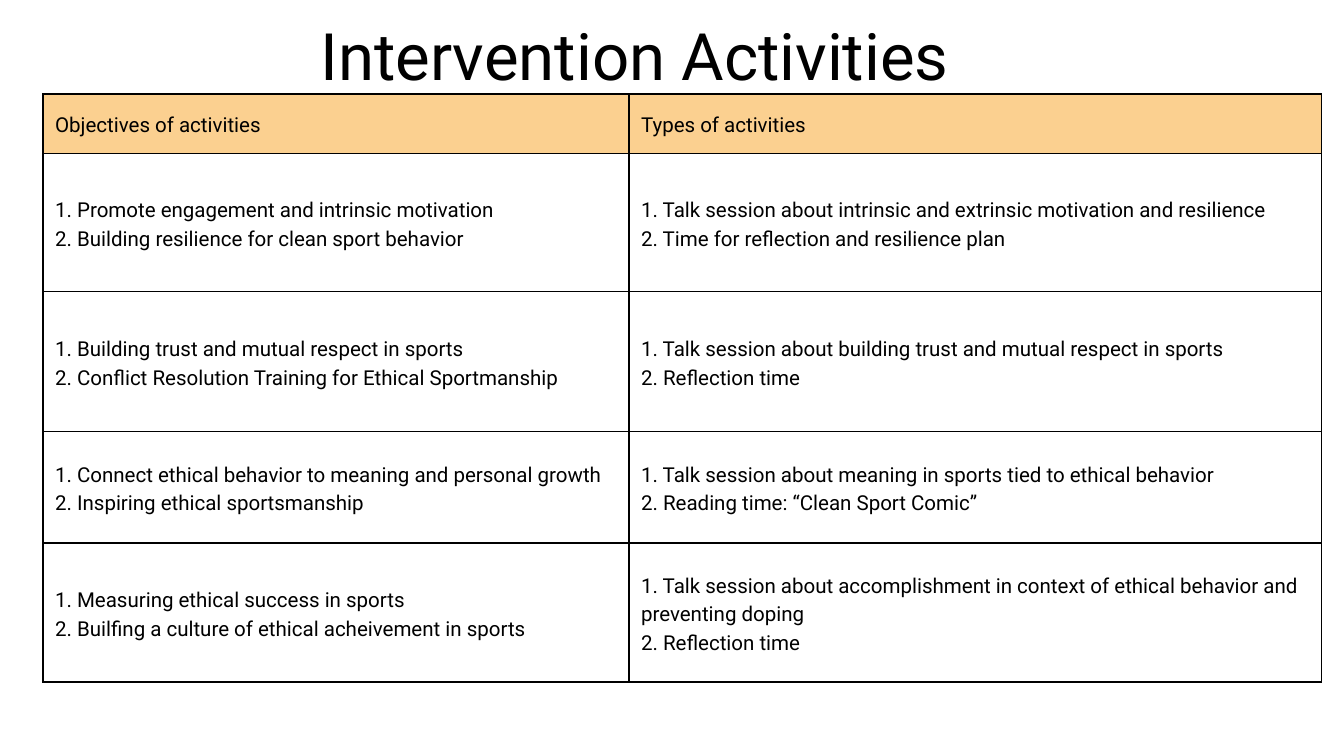
from typing import NamedTuple

from lxml import etree
from pptx import Presentation
from pptx import util as u
from pptx.dml.color import RGBColor
from pptx.enum import text as t
from pptx.oxml import ns

COLORS = {"ink": "000000", "header": "FBD090", "paper": "FFFFFF"}
FONT = "Roboto"
WIDTH, HEIGHT = u.Inches(20), u.Inches(11.25)
COLUMN_WIDTHS = (8.72, 10.31)
CELL_MARGIN = u.Inches(0.18)
BORDER = u.Pt(1.5)


class Row(NamedTuple):
    height: float
    objectives: list[str]
    types: list[str]
    fill: str = "paper"
    numbered: bool = True


ROWS = [
    Row(0.88, ["Objectives of activities"], ["Types of activities"], "header", False),
    Row(2.06,
        ["Promote engagement and intrinsic motivation",
         "Building resilience for clean sport behavior"],
        ["Talk session about intrinsic and extrinsic motivation and resilience",
         "Time for reflection and resilience plan"]),
    Row(2.08,
        ["Building trust and mutual respect in sports",
         "Conflict Resolution Training for Ethical Sportmanship"],
        ["Talk session about building trust and mutual respect in sports",
         "Reflection time"]),
    Row(1.66,
        ["Connect ethical behavior to meaning and personal growth",
         "Inspiring ethical sportsmanship"],
        ["Talk session about meaning in sports tied to ethical behavior",
         "Reading time: “Clean Sport Comic”"]),
    Row(2.07,
        ["Measuring ethical success in sports",
         "Builfing a culture of ethical acheivement in sports"],
        ["Talk session about accomplishment in context of ethical behavior and preventing doping",
         "Reflection time"]),
]


def write_lines(frame, lines: list[str], size: float, spacing: float) -> None:
    for index, line in enumerate(lines):
        paragraph = frame.paragraphs[0] if index == 0 else frame.add_paragraph()
        paragraph.alignment = t.PP_ALIGN.LEFT
        paragraph.line_spacing = u.Pt(spacing)
        run = paragraph.add_run()
        run.text = line
        run.font.name = FONT
        run.font.size = u.Pt(size)
        run.font.bold = False
        run.font.color.rgb = RGBColor.from_string(COLORS["ink"])


def add_borders(cell) -> None:
    properties = cell._tc.get_or_add_tcPr()
    for side in ("a:lnL", "a:lnR", "a:lnT", "a:lnB"):
        line = etree.SubElement(properties, ns.qn(side), w=str(BORDER))
        fill = etree.SubElement(line, ns.qn("a:solidFill"))
        etree.SubElement(fill, ns.qn("a:srgbClr"), val=COLORS["ink"])


def fill_cell(cell, lines: list[str], row: Row) -> None:
    cell.vertical_anchor = t.MSO_ANCHOR.MIDDLE
    cell.margin_left = cell.margin_right = CELL_MARGIN
    cell.margin_top = cell.margin_bottom = CELL_MARGIN
    add_borders(cell)
    cell.fill.solid()
    cell.fill.fore_color.rgb = RGBColor.from_string(COLORS[row.fill])
    if row.numbered:
        lines = [f"{number}. {line}" for number, line in enumerate(lines, 1)]
    write_lines(cell.text_frame, lines, 22, 30.8)


def add_activity_table(slide) -> None:
    table = slide.shapes.add_table(
        len(ROWS), len(COLUMN_WIDTHS), int(WIDTH * 0.032), int(HEIGHT * 0.1244),
        u.Inches(sum(COLUMN_WIDTHS)), u.Inches(sum(row.height for row in ROWS))).table
    table.first_row = table.horz_banding = False
    for column, width in zip(table.columns, COLUMN_WIDTHS):
        column.width = u.Inches(width)
    for index, row in enumerate(ROWS):
        table.rows[index].height = u.Inches(row.height)
        for column, lines in enumerate((row.objectives, row.types)):
            fill_cell(table.cell(index, column), lines, row)


def add_title(slide) -> None:
    title = slide.shapes.title
    title.left, title.top = int(WIDTH * 0.2385), int(HEIGHT * 0.0204)
    title.width, title.height = int(WIDTH * 0.597), int(HEIGHT * 0.104)
    frame = title.text_frame
    frame.margin_left = frame.margin_right = frame.margin_top = frame.margin_bottom = 0
    frame.vertical_anchor = t.MSO_ANCHOR.TOP
    frame.auto_size = t.MSO_AUTO_SIZE.NONE
    frame.word_wrap = True
    write_lines(frame, ["Intervention Activities"], 70, 84)


def main() -> None:
    presentation = Presentation()
    presentation.slide_width, presentation.slide_height = WIDTH, HEIGHT
    slide = presentation.slides.add_slide(presentation.slide_layouts[5])
    add_title(slide)
    add_activity_table(slide)
    presentation.save("out.pptx")


if __name__ == "__main__":
    main()
